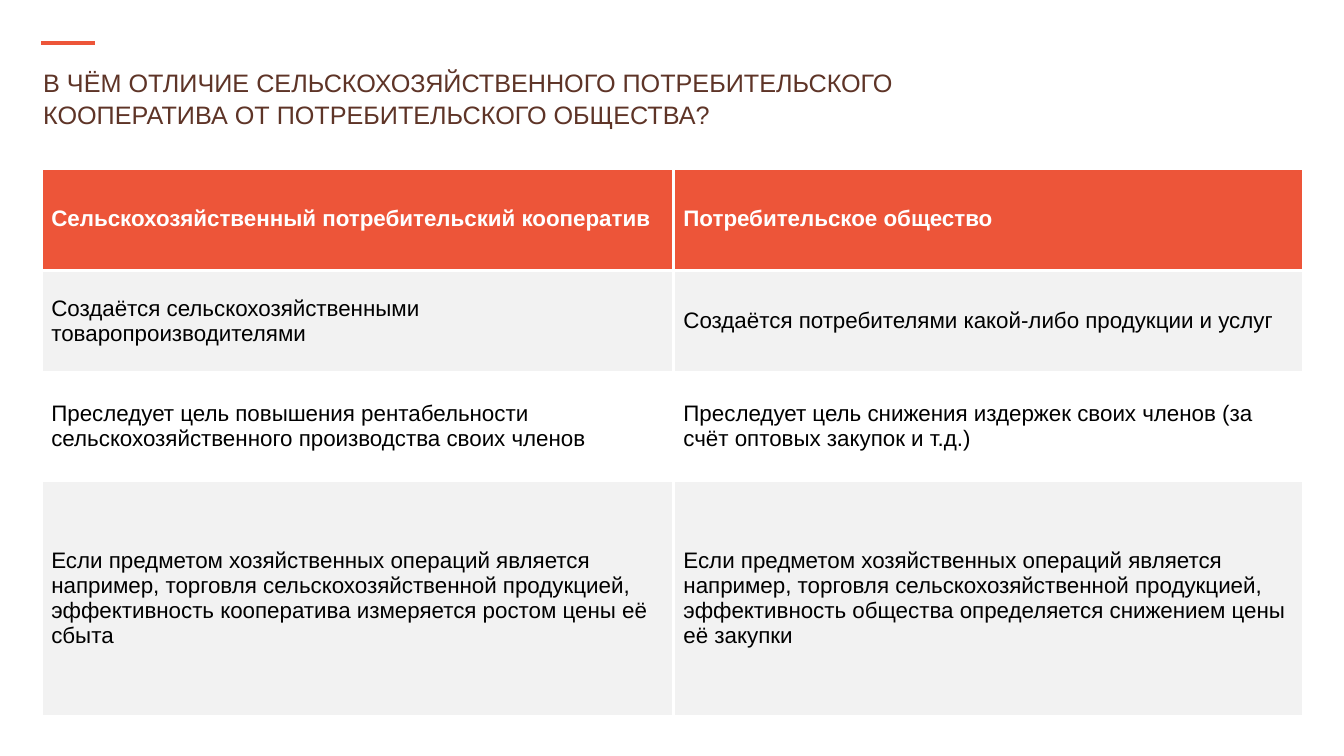
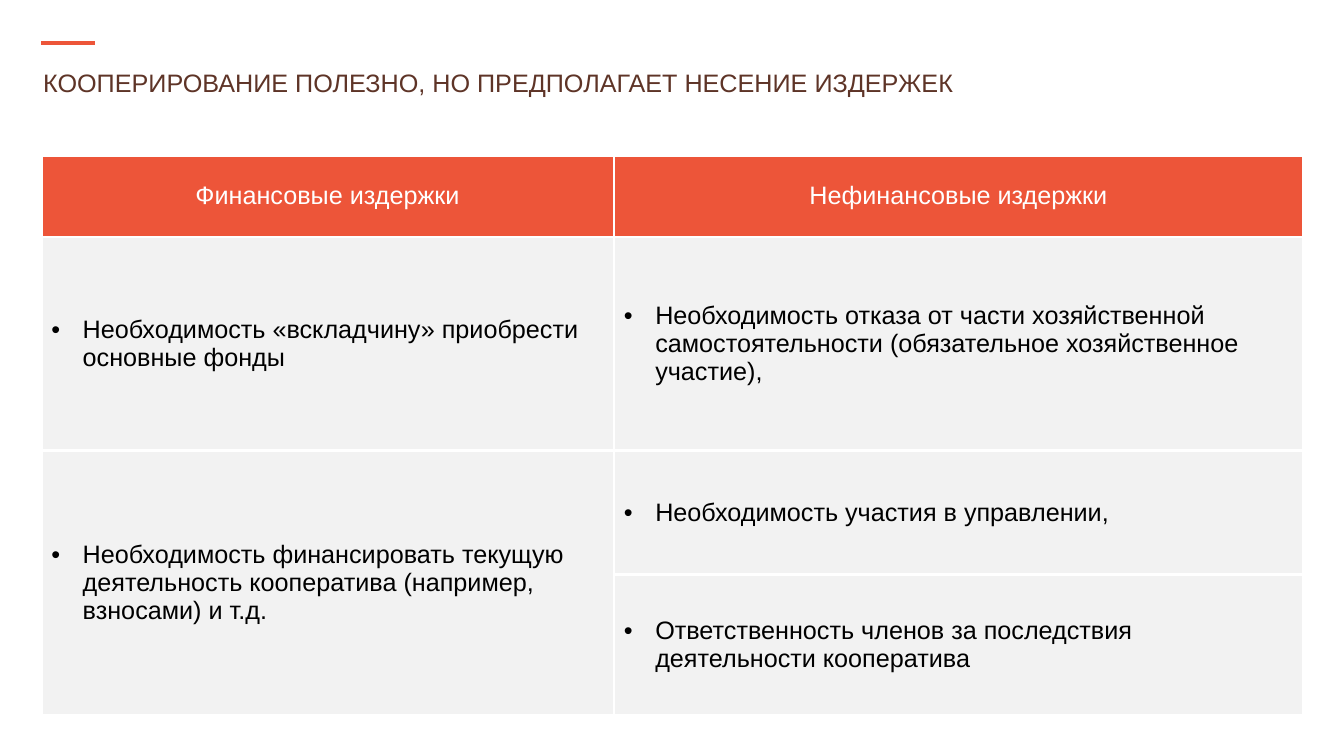
from dataclasses import dataclass
from typing import Optional

from lxml import etree
from pptx import Presentation
from pptx.dml.color import RGBColor
from pptx.enum import shapes, text
from pptx.oxml import ns
from pptx.util import Cm, Length, Pt

# Shared style
ORANGE = RGBColor(0xED, 0x55, 0x39)
BROWN = RGBColor(0x5E, 0x34, 0x27)
GREY = RGBColor(0xF2, 0xF2, 0xF2)
WHITE = RGBColor(0xFF, 0xFF, 0xFF)
BLACK = RGBColor(0x00, 0x00, 0x00)
FONT = "Arial"
LEFT = Cm(1.04)
BORDER = Pt(2.25)
BULLET_INDENT = Cm(0.79)


@dataclass(frozen=True)
class TableSlide:
    title: str
    top: Length
    widths: list[float]
    heights: list[float]
    rows: list[list[Optional[str]]]  # None continues the cell above
    fills: list[RGBColor]
    size: Length
    bold_header: bool = False
    centre_header: bool = False
    bullets: bool = False


SLIDES = [
    TableSlide(
        title="В ЧЁМ ОТЛИЧИЕ СЕЛЬСКОХОЗЯЙСТВЕННОГО ПОТРЕБИТЕЛЬСКОГО "
              "КООПЕРАТИВА ОТ ПОТРЕБИТЕЛЬСКОГО ОБЩЕСТВА?",
        top=Cm(4.24),
        widths=[15.93, 15.87],
        heights=[2.57, 2.57, 2.74, 5.92],
        rows=[
            ["Сельскохозяйственный потребительский кооператив",
             "Потребительское общество"],
            ["Создаётся сельскохозяйственными товаропроизводителями",
             "Создаётся потребителями какой-либо продукции и услуг"],
            ["Преследует цель повышения рентабельности "
             "сельскохозяйственного производства своих членов",
             "Преследует цель снижения издержек своих членов "
             "(за счёт оптовых закупок и т.д.)"],
            ["Если предметом хозяйственных операций является например, "
             "торговля сельскохозяйственной продукцией, эффективность "
             "кооператива измеряется ростом цены её сбыта",
             "Если предметом хозяйственных операций является например, "
             "торговля сельскохозяйственной продукцией, эффективность "
             "общества определяется снижением цены её закупки"],
        ],
        fills=[ORANGE, GREY, WHITE, GREY],
        size=Pt(16),
        bold_header=True,
    ),
    TableSlide(
        title="КООПЕРИРОВАНИЕ ПОЛЕЗНО, НО ПРЕДПОЛАГАЕТ НЕСЕНИЕ ИЗДЕРЖЕК",
        top=Cm(3.91),
        widths=[14.43, 17.37],
        heights=[2.06, 5.38, 3.12, 3.56],
        rows=[
            ["Финансовые издержки", "Нефинансовые издержки"],
            ["Необходимость «вскладчину» приобрести основные фонды",
             "Необходимость отказа от части хозяйственной "
             "самостоятельности (обязательное хозяйственное участие),"],
            ["Необходимость финансировать текущую деятельность "
             "кооператива (например, взносами) и т.д.",
             "Необходимость участия в управлении,"],
            [None,
             "Ответственность членов за последствия деятельности "
             "кооператива"],
        ],
        fills=[ORANGE, GREY, GREY, GREY],
        size=Pt(18),
        centre_header=True,
        bullets=True,
    ),
]


def add_run(p, content: str, size: Length, color: RGBColor,
            bold: bool = False) -> None:
    r = p.add_run()
    r.text = content
    r.font.name = FONT
    r.font.size = size
    r.font.bold = bold
    r.font.color.rgb = color


def add_heading(s, title: str) -> None:
    # Accent line
    accent = s.shapes.add_connector(
        shapes.MSO_CONNECTOR.STRAIGHT, LEFT, Cm(1.09), Cm(2.39), Cm(1.09))
    accent.line.color.rgb = ORANGE
    accent.line.width = Pt(3)
    etree.SubElement(accent._element.spPr, ns.qn("a:effectLst"))
    # Title
    box = s.shapes.add_textbox(Cm(0.84), Cm(1.52), Cm(25.55), Cm(0.81))
    tf = box.text_frame
    tf.word_wrap = True
    p = tf.paragraphs[0]
    p.line_spacing = 1.07
    add_run(p, title, Pt(18), BROWN)


def add_borders(cell) -> None:
    tc_pr = cell._tc.get_or_add_tcPr()
    for i, side in enumerate(("lnL", "lnR", "lnT", "lnB")):
        ln = etree.Element(ns.qn(f"a:{side}"), w=str(BORDER))
        fill = etree.SubElement(ln, ns.qn("a:solidFill"))
        etree.SubElement(fill, ns.qn("a:srgbClr"), val=str(WHITE))
        tc_pr.insert(i, ln)


def add_bullet(p) -> None:
    p_pr = p._p.get_or_add_pPr()
    p_pr.set("marL", str(BULLET_INDENT))
    p_pr.set("indent", str(-BULLET_INDENT))
    etree.SubElement(p_pr, ns.qn("a:buFont"), typeface=FONT)
    etree.SubElement(p_pr, ns.qn("a:buChar"), char="•")


def add_grid(s, data: TableSlide) -> None:
    table = s.shapes.add_table(
        len(data.heights), len(data.widths), LEFT, data.top,
        Cm(sum(data.widths)), Cm(sum(data.heights))).table
    table.first_row = True
    table.horz_banding = False
    for column, width in zip(table.columns, data.widths):
        column.width = Cm(width)
    for row, height in zip(table.rows, data.heights):
        row.height = Cm(height)

    for i, (contents, fill) in enumerate(zip(data.rows, data.fills)):
        header = i == 0
        for j, content in enumerate(contents):
            cell = table.cell(i, j)
            cell.fill.solid()
            cell.fill.fore_color.rgb = fill
            add_borders(cell)
            if content is None:
                table.cell(i - 1, j).merge(cell)
                continue
            cell.vertical_anchor = text.MSO_ANCHOR.MIDDLE
            p = cell.text_frame.paragraphs[0]
            if header and data.centre_header:
                p.alignment = text.PP_ALIGN.CENTER
            if data.bullets and not header:
                add_bullet(p)
            add_run(p, content, data.size, WHITE if header else BLACK,
                    header and data.bold_header)


def main() -> None:
    prs = Presentation()
    prs.slide_width, prs.slide_height = Cm(33.87), Cm(19.05)
    for data in SLIDES:
        s = prs.slides.add_slide(prs.slide_layouts[6])
        add_heading(s, data.title)
        add_grid(s, data)
    prs.save("out.pptx")


if __name__ == "__main__":
    main()
